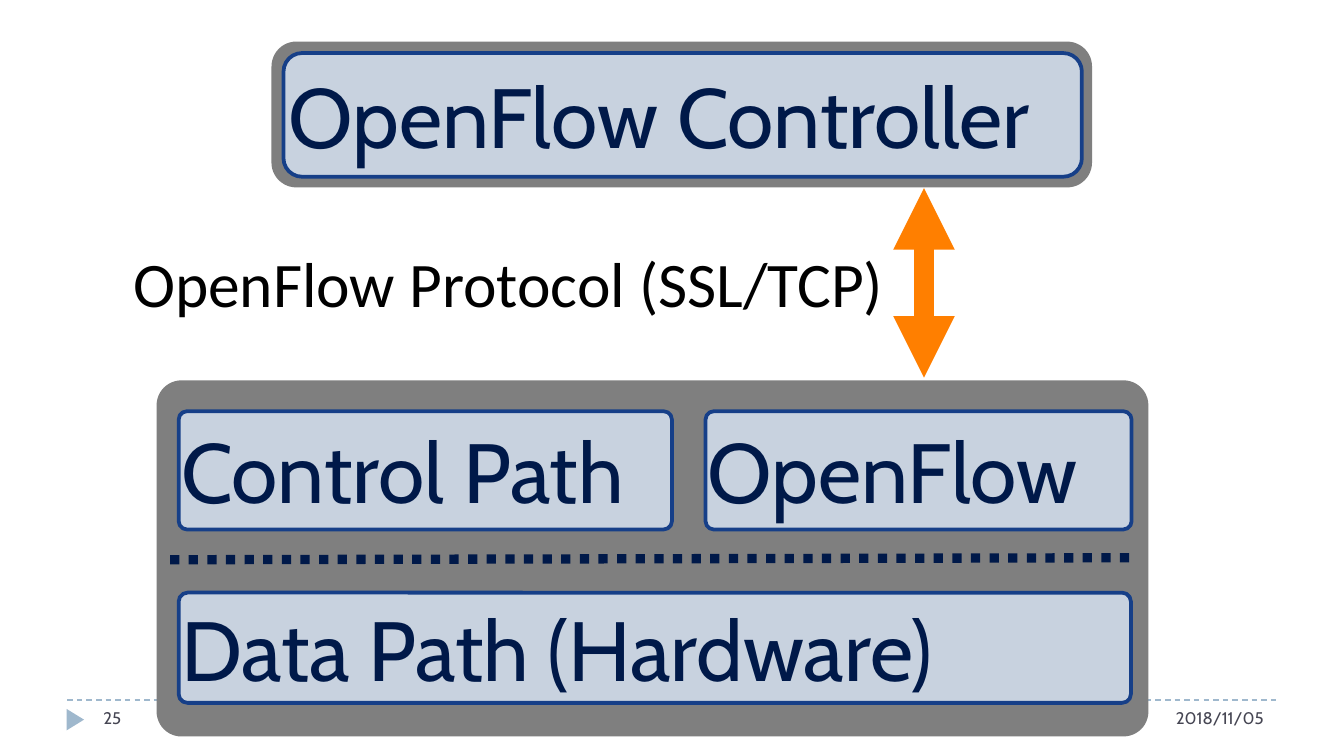
from dataclasses import dataclass

from lxml.etree import SubElement
from pptx import Presentation
from pptx.dml.color import RGBColor
from pptx.enum.dml import MSO_LINE as Dash
from pptx.enum.shapes import MSO_CONNECTOR as Link, MSO_SHAPE as Kind
from pptx.enum.text import MSO_ANCHOR as Anchor, PP_ALIGN as Align
from pptx.oxml.ns import qn
from pptx.shapes.autoshape import Shape
from pptx.slide import Slide
from pptx.text.text import TextFrame
from pptx.util import Pt

PX = 4572
GRAY = RGBColor(0x7F, 0x7F, 0x7F)
PALE = RGBColor(0xC8, 0xD2, 0xDF)
BLUE = RGBColor(0x16, 0x3F, 0x88)
NAVY = RGBColor(0x00, 0x19, 0x49)
ORANGE = RGBColor(0xFF, 0x7F, 0x00)
BLACK = RGBColor(0x00, 0x00, 0x00)
SLATE = RGBColor(0x46, 0x46, 0x53)
MIST = RGBColor(0x9F, 0xB8, 0xCD)


@dataclass(frozen=True)
class Rect:
    left: int
    top: int
    width: int
    height: int

    def emu(self) -> list[int]:
        return [n * PX for n in (self.left, self.top, self.width, self.height)]


@dataclass(frozen=True)
class Panel:
    rect: Rect
    round: float
    label: str = ""


@dataclass(frozen=True)
class Rule:
    start: tuple[int, int]
    end: tuple[int, int]
    color: RGBColor
    width: float
    dash: Dash | None = None
    heads: bool = False


@dataclass(frozen=True)
class Note:
    rect: Rect
    text: str
    align: Align = Align.LEFT


FOOT = Rule((100, 1042), (1900, 1042), MIST, 0.75, Dash.DASH)
SPLIT = Rule((253, 833), (1684, 830), NAVY, 5, Dash.ROUND_DOT)
ARROW = Rule((1375, 280), (1375, 562), ORANGE, 11, heads=True)
NOTES = [
    Note(Rect(1566, 1043, 334, 60), "2018/11/05", Align.RIGHT),
    Note(Rect(134, 1043, 216, 60), "25"),
]
SWITCH = [
    Panel(Rect(233, 566, 1476, 530), 0.07),
    Panel(Rect(266, 882, 1417, 164), 0.08, "Data Path (Hardware)"),
    Panel(Rect(266, 612, 734, 176), 0.07, "Control Path"),
    Panel(Rect(1050, 612, 634, 176), 0.07, "OpenFlow"),
]
CONTROL = [
    Panel(Rect(404, 62, 1221, 217), 0.17),
    Panel(Rect(422, 79, 1188, 184), 0.15, "OpenFlow Controller"),
]


def write(frame: TextFrame, text: str, *, size: int, color: RGBColor,
          font: str = "Cabin", align: Align = Align.LEFT,
          anchor: Anchor = Anchor.TOP, flush: bool = False,
          wrap: bool = True) -> None:
    frame.word_wrap = wrap
    frame.vertical_anchor = anchor
    if flush:
        frame.margin_left = frame.margin_right = 0
        frame.margin_top = frame.margin_bottom = 0
    para = frame.paragraphs[0]
    para.alignment = align
    run = para.add_run()
    run.text = text
    run.font.size = Pt(size)
    run.font.name = font
    run.font.color.rgb = color


def draw_shape(slide: Slide, kind: Kind, rect: Rect, fill: RGBColor) -> Shape:
    shape = slide.shapes.add_shape(kind, *rect.emu())
    shape.shadow.inherit = False
    shape.fill.solid()
    shape.fill.fore_color.rgb = fill
    shape.line.fill.background()
    return shape


def draw_panel(slide: Slide, panel: Panel) -> None:
    fill = PALE if panel.label else GRAY
    shape = draw_shape(slide, Kind.ROUNDED_RECTANGLE, panel.rect, fill)
    shape.adjustments[0] = panel.round
    if panel.label:
        shape.line.color.rgb = BLUE
        shape.line.width = Pt(2)
        write(shape.text_frame, panel.label, size=45, color=NAVY,
              anchor=Anchor.MIDDLE, flush=True)


def draw_rule(slide: Slide, rule: Rule) -> None:
    ends = [n * PX for n in (*rule.start, *rule.end)]
    link = slide.shapes.add_connector(Link.STRAIGHT, *ends)
    link.line.color.rgb = rule.color
    link.line.width = Pt(rule.width)
    if rule.dash is not None:
        link.line.dash_style = rule.dash
    props = link._element.spPr
    if rule.heads:
        for tag in ("a:headEnd", "a:tailEnd"):
            SubElement(props.find(qn("a:ln")), qn(tag), type="triangle")
    SubElement(props, qn("a:effectLst"))


def draw_note(slide: Slide, note: Note, **style) -> None:
    box = slide.shapes.add_textbox(*note.rect.emu())
    write(box.text_frame, note.text, align=note.align, **style)


def main() -> None:
    deck = Presentation()
    deck.slide_width = 2000 * PX
    deck.slide_height = 1125 * PX
    slide = deck.slides.add_slide(deck.slide_layouts[6])

    draw_rule(slide, FOOT)
    mark = draw_shape(slide, Kind.ISOSCELES_TRIANGLE, Rect(96, 1058, 32, 26), MIST)
    mark.rotation = 90
    for note in NOTES:
        draw_note(slide, note, size=9, color=SLATE)

    for panel in SWITCH + CONTROL:
        draw_panel(slide, panel)
    draw_rule(slide, SPLIT)
    draw_rule(slide, ARROW)
    draw_note(slide, Note(Rect(198, 363, 1130, 114), "OpenFlow Protocol (SSL/TCP)"),
              size=34, color=BLACK, font="Calibri", anchor=Anchor.MIDDLE,
              flush=True, wrap=False)

    deck.save("out.pptx")


if __name__ == "__main__":
    main()
